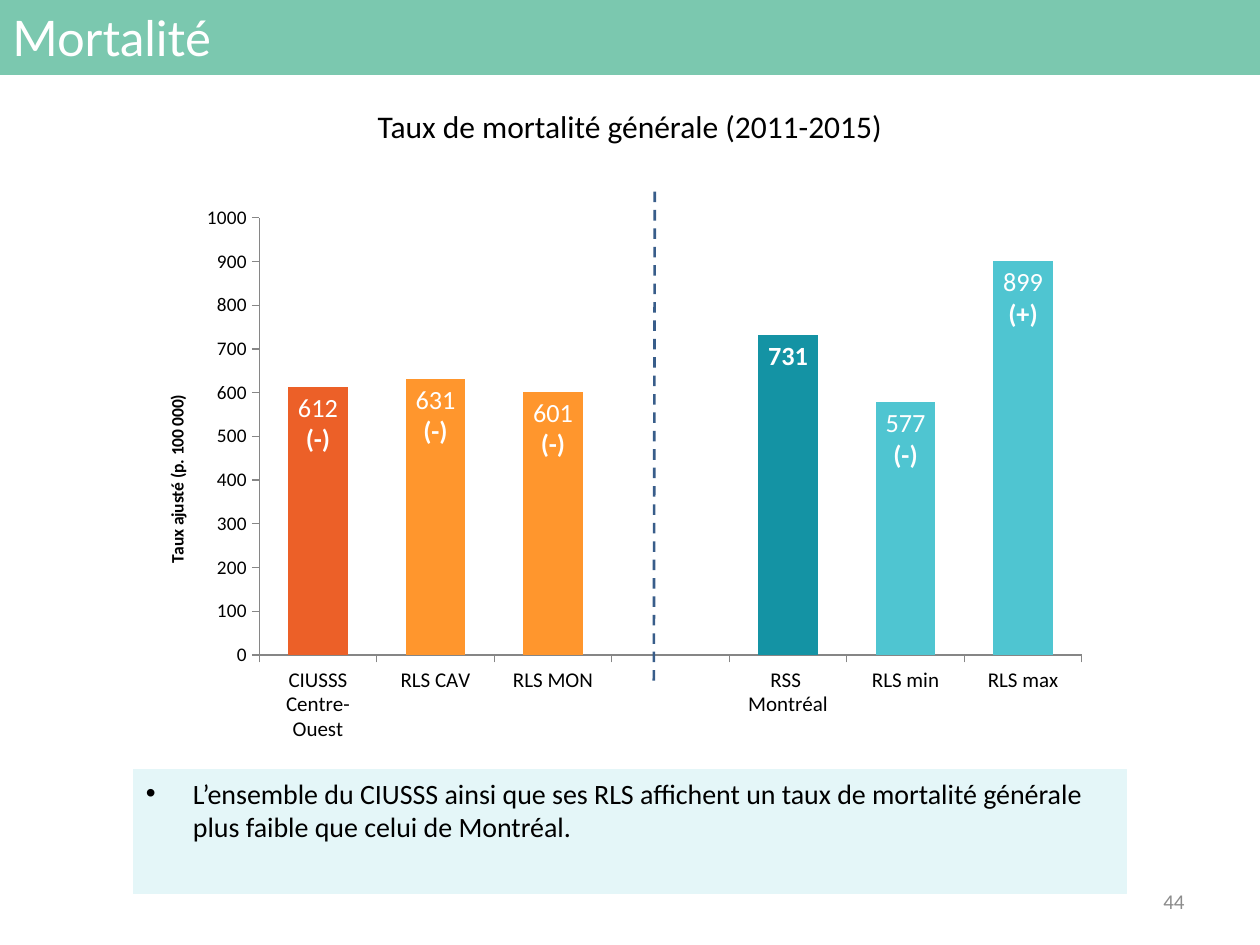
import pptx
import pptx.chart.data
import pptx.dml.color
import pptx.enum.chart
import pptx.enum.dml
import pptx.enum.shapes
import pptx.enum.text
import pptx.oxml.ns
import pptx.util
from lxml import etree

Cm, Pt = pptx.util.Cm, pptx.util.Pt
rgb = pptx.dml.color.RGBColor.from_string
qn = pptx.oxml.ns.qn
Align = pptx.enum.text.PP_ALIGN


class Theme:
    white, black, grey = rgb("FFFFFF"), rgb("000000"), rgb("8C8C8C")
    banner, note, divider = rgb("7BC8AF"), rgb("E4F6F8"), rgb("385D8A")
    axis = rgb("868686")
    ciusss, local = rgb("EC6028"), rgb("FF962D")
    montreal, extreme = rgb("1493A4"), rgb("4FC5D1")
    body_font, title_font = "Calibri", "Lato"
    title, subtitle, text, number = Pt(28), Pt(18), Pt(16), Pt(12)
    bar_label, category, value, axis_title = Pt(15), Pt(12), Pt(11), Pt(10)


def add_run(paragraph, text, size, color, font=Theme.body_font, bold=False):
    run = paragraph.add_run()
    run.text = text
    run.font.size, run.font.bold, run.font.name = size, bold, font
    run.font.color.rgb = color


def set_layout(element, **values):
    """Place a chart part by fractions of the chart area."""
    layout = element.find(qn("c:layout"))
    if layout is None:
        layout = etree.Element(qn("c:layout"))
        element.insert(0, layout)
    manual = etree.SubElement(layout, qn("c:manualLayout"))
    for tag, value in values.items():
        etree.SubElement(manual, qn(f"c:{tag}")).set("val", str(value))


presentation = pptx.Presentation()
presentation.slide_width, presentation.slide_height = Cm(25.4), Cm(19.05)
slide = presentation.slides.add_slide(presentation.slide_layouts[6])
shapes = slide.shapes

# Banner and note
panels = []
for left, top, width, height, color in (
    (0, 0, 25.4, 1.5, Theme.banner),
    (2.69, 15.52, 20.02, 2.49, Theme.note),
):
    panel = shapes.add_shape(
        pptx.enum.shapes.MSO_SHAPE.RECTANGLE, Cm(left), Cm(top), Cm(width), Cm(height))
    panel.shadow.inherit = False
    panel.fill.solid()
    panel.fill.fore_color.rgb = color
    panel.line.color.rgb = color
    panel.line.width = Pt(0.75)
    panel.text_frame.word_wrap = True
    panel.text_frame.paragraphs[0].alignment = Align.LEFT
    panels.append(panel)
banner, note = panels

banner.text_frame.vertical_anchor = pptx.enum.text.MSO_ANCHOR.MIDDLE
add_run(banner.text_frame.paragraphs[0], "Mortalité", Theme.title, Theme.white,
        Theme.title_font)

note.text_frame.vertical_anchor = pptx.enum.text.MSO_ANCHOR.TOP
paragraph = note.text_frame.paragraphs[0]
paragraph.space_before = Pt(4)
add_run(paragraph,
        "L’ensemble du CIUSSS ainsi que ses RLS affichent un taux de mortalité "
        "générale plus faible que celui de Montréal.", Theme.text, Theme.black)
properties = paragraph._p.get_or_add_pPr()
properties.set("marL", str(Cm(0.95)))
properties.set("indent", str(-Cm(0.95)))
etree.SubElement(properties, qn("a:buFont")).set("typeface", "Arial")
etree.SubElement(properties, qn("a:buChar")).set("char", "•")

# Chart heading and slide number
for left, top, width, text, size, color, alignment in (
    (0, 2.03, 25.4, "Taux de mortalité générale (2011-2015)",
     Theme.subtitle, Theme.black, Align.CENTER),
    (18.2, 17.66, 5.93, "44", Theme.number, Theme.grey, Align.RIGHT),
):
    box = shapes.add_textbox(Cm(left), Cm(top), Cm(width), Cm(1.02))
    box.text_frame.word_wrap = True
    box.text_frame.vertical_anchor = pptx.enum.text.MSO_ANCHOR.MIDDLE
    box.text_frame.paragraphs[0].alignment = alignment
    add_run(box.text_frame.paragraphs[0], text, size, color)

# Mortality chart: category, rate, comparison with Montréal, colour
bars = (
    ("CIUSSS\nCentre-Ouest", 612, "(-)", Theme.ciusss),
    ("RLS CAV", 631, "(-)", Theme.local),
    ("RLS MON", 601, "(-)", Theme.local),
    ("", None, "", None),
    ("RSS \nMontréal", 731, "", Theme.montreal),
    ("RLS min", 577, "(-)", Theme.extreme),
    ("RLS max", 899, "(+)", Theme.extreme),
)
chart_data = pptx.chart.data.CategoryChartData(number_format="0")
chart_data.categories = [bar[0] for bar in bars]
chart_data.add_series("Series 1", [bar[1] for bar in bars])
chart = shapes.add_chart(
    pptx.enum.chart.XL_CHART_TYPE.COLUMN_CLUSTERED,
    Cm(2.69), Cm(3.94), Cm(19.51), Cm(11.3), chart_data).chart
chart.has_legend = False
chart.has_title = False
chart.font.name, chart.font.size = Theme.body_font, Theme.axis_title
chart.font.color.rgb = Theme.black
set_layout(chart.element.find(".//" + qn("c:plotArea")), layoutTarget="inner",
           xMode="edge", yMode="edge", x=0.13, y=0.04, w=0.85, h=0.78)

for axis, size in ((chart.category_axis, Theme.category), (chart.value_axis, Theme.value)):
    axis.has_major_gridlines = False
    axis.major_tick_mark = pptx.enum.chart.XL_TICK_MARK.OUTSIDE
    axis.minor_tick_mark = pptx.enum.chart.XL_TICK_MARK.NONE
    axis.tick_labels.font.size = size
    axis.format.line.color.rgb = Theme.axis
    axis.format.line.width = Pt(0.75)

value_axis = chart.value_axis
value_axis.minimum_scale, value_axis.maximum_scale, value_axis.major_unit = 0, 1000, 100
value_axis.tick_labels.number_format = "0"
value_axis.tick_labels.number_format_is_linked = False
axis_title = value_axis.axis_title
add_run(axis_title.text_frame.paragraphs[0], "Taux ajusté (p. 100 000)",
        Theme.axis_title, Theme.black, bold=True)
axis_title.text_frame._txBody.bodyPr.set("rot", "-5400000")
axis_title.text_frame._txBody.bodyPr.set("vert", "horz")
set_layout(axis_title.element.find(qn("c:layout")).getparent(),
           xMode="edge", yMode="edge", x=0.03, y=0.35)

plot = chart.plots[0]
plot.gap_width = 100
plot.vary_by_categories = False
series = plot.series[0]
inside_end = pptx.enum.chart.XL_LABEL_POSITION.INSIDE_END
labels = series.data_labels
labels.show_value = True
labels.position = inside_end
labels.number_format, labels.number_format_is_linked = "0", False
labels.font.size, labels.font.bold = Theme.bar_label, True
labels.font.color.rgb = Theme.white

for index, (category, rate, comparison, color) in enumerate(bars):
    if rate is None:
        continue
    point = series.points[index]
    point.format.fill.solid()
    point.format.fill.fore_color.rgb = color
    point.format.line.color.rgb = color
    if comparison:
        frame = point.data_label.text_frame
        add_run(frame.paragraphs[0], str(rate), Theme.bar_label, Theme.white)
        add_run(frame.add_paragraph(), comparison, Theme.bar_label, Theme.white, bold=True)
        point.data_label.position = inside_end

# Divider between the local and Montréal bars
divider = shapes.add_connector(
    pptx.enum.shapes.MSO_CONNECTOR.STRAIGHT, Cm(13.18), Cm(13.72), Cm(13.2), Cm(3.81))
divider.line.color.rgb = Theme.divider
divider.line.width = Pt(1.5)
divider.line.dash_style = pptx.enum.dml.MSO_LINE.DASH
etree.SubElement(divider.element.spPr, qn("a:effectLst"))

presentation.save("out.pptx")
